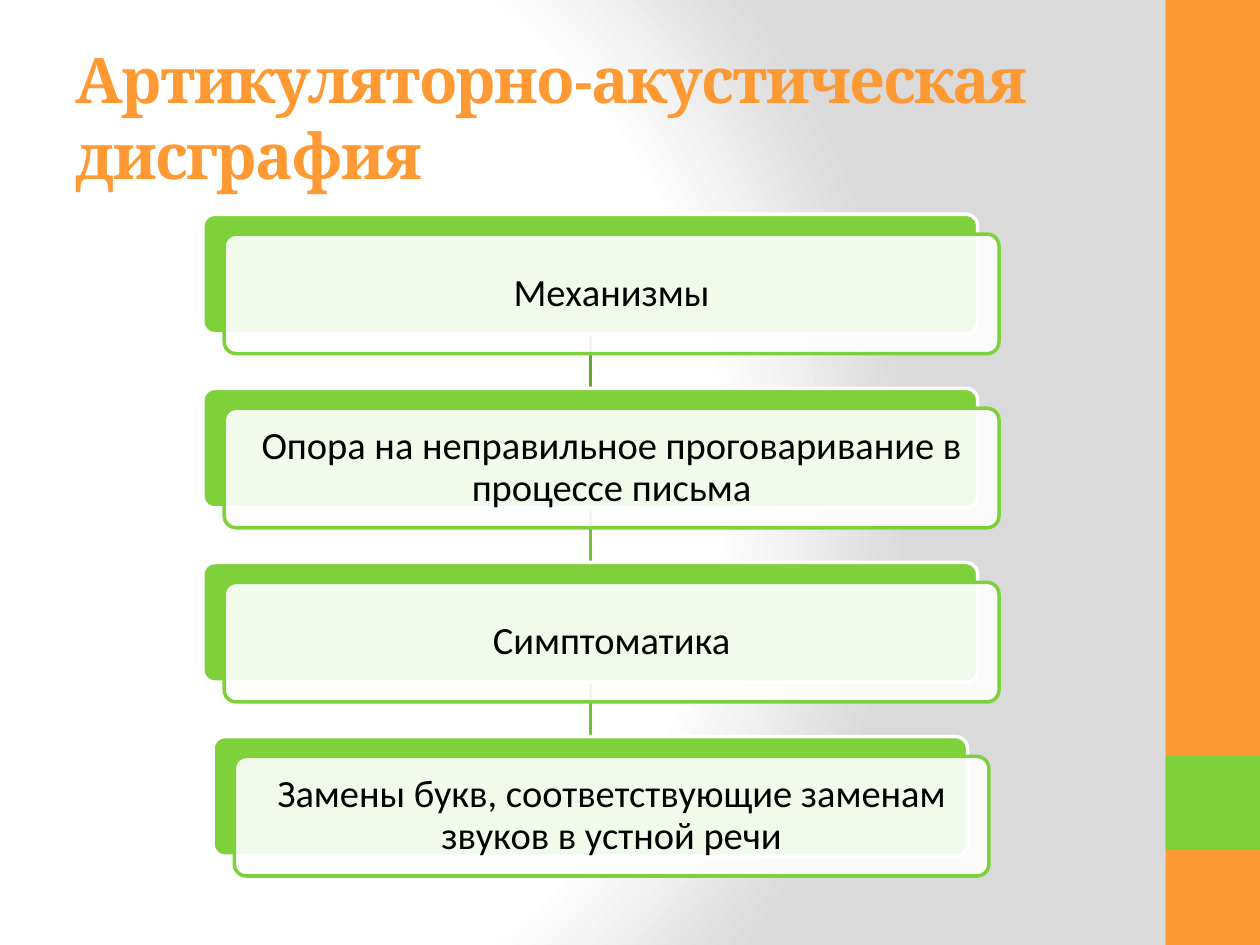
from dataclasses import dataclass

import pptx
import pptx.dml.color
import pptx.enum.shapes
import pptx.enum.text
import pptx.oxml
import pptx.oxml.ns
import pptx.util

Cm = pptx.util.Cm
Pt = pptx.util.Pt
qn = pptx.oxml.ns.qn

COLORS = {
    "orange": "FF9933",
    "green": "7FD13B",
    "first_link": "66A72F",
    "link": "73BE36",
    "white": "FFFFFF",
    "grey": "DADADA",
    "black": "000000",
}

CENTER_X = 11.9
FIRST_TOP = 4.32
PITCH = 3.51
CARD_HEIGHT = 2.41
SHIFT_X, SHIFT_Y = 0.43, 0.4
INSET = 0.23


@dataclass
class Step:
    text: str
    width: float = 15.62


STEPS = [
    Step("Механизмы"),
    Step("Опора на неправильное проговаривание в процессе письма"),
    Step("Симптоматика"),
    Step("Замены букв, соответствующие заменам звуков в устной речи", 15.21),
]


def rgb(color: str) -> pptx.dml.color.RGBColor:
    return pptx.dml.color.RGBColor.from_string(COLORS[color])


def set_attributes(target, values: dict) -> None:
    for name, value in values.items():
        setattr(target, name, value)


def set_background(slide) -> None:
    """Fill the slide with a radial gradient from white to grey."""
    stops = "".join(
        f'<a:gs pos="{position}000"><a:srgbClr val="{COLORS[color]}"/></a:gs>'
        for position, color in ((0, "white"), (75, "white"), (100, "grey"))
    )
    background = pptx.oxml.parse_xml(
        f'<p:bg {pptx.oxml.ns.nsdecls("p", "a")}><p:bgPr>'
        f'<a:gradFill rotWithShape="1"><a:gsLst>{stops}</a:gsLst>'
        '<a:path path="circle">'
        '<a:fillToRect l="20000" t="50000" r="100000" b="50000"/></a:path>'
        "</a:gradFill><a:effectLst/></p:bgPr></p:bg>"
    )
    slide.element.find(qn("p:cSld")).insert(0, background)


def add_block(slide, left: float, top: float, width: float, height: float,
              fill: str, outline: str | None = None):
    """Add a plain rectangle, or a rounded one when it has an outline."""
    kinds = pptx.enum.shapes.MSO_SHAPE
    kind = kinds.ROUNDED_RECTANGLE if outline else kinds.RECTANGLE
    block = slide.shapes.add_shape(kind, Cm(left), Cm(top), Cm(width), Cm(height))
    block.shadow.inherit = False
    block.fill.solid()
    block.fill.fore_color.rgb = rgb(fill)
    if outline:
        block.adjustments[0] = 0.1
        block.line.color.rgb = rgb(outline)
        block.line.width = Pt(2)
    else:
        block.line.fill.background()
    return block


def add_link(slide, top: float, bottom: float, color: str) -> None:
    link = slide.shapes.add_connector(
        pptx.enum.shapes.MSO_CONNECTOR.STRAIGHT,
        Cm(CENTER_X), Cm(top), Cm(CENTER_X), Cm(bottom),
    )
    link.line.color.rgb = rgb(color)
    link.line.width = Pt(2)
    properties = link.element.find(qn("p:spPr"))
    properties.append(properties.makeelement(qn("a:effectLst"), {}))


def add_step(slide, step: Step, top: float) -> None:
    """Add a green card with a translucent white text card in front."""
    left = CENTER_X - step.width / 2
    add_block(slide, left, top, step.width, CARD_HEIGHT, "green", "white")
    front = add_block(slide, left + SHIFT_X, top + SHIFT_Y, step.width,
                      CARD_HEIGHT, "white", "green")
    front_color = front.element.spPr.find(qn("a:solidFill"))[0]
    front_color.append(front_color.makeelement(qn("a:alpha"), {"val": "90000"}))

    frame = front.text_frame
    margins = ("margin_left", "margin_top", "margin_right", "margin_bottom")
    set_attributes(frame, dict.fromkeys(margins, Cm(INSET)))
    set_attributes(frame, {
        "word_wrap": True,
        "vertical_anchor": pptx.enum.text.MSO_ANCHOR.MIDDLE,
        "text": step.text,
    })
    paragraph = frame.paragraphs[0]
    set_attributes(paragraph, {
        "alignment": pptx.enum.text.PP_ALIGN.CENTER,
        "line_spacing": 0.9,
    })
    font = paragraph.runs[0].font
    set_attributes(font, {"name": "Calibri", "size": Pt(22)})
    font.color.rgb = rgb("black")


def format_title(slide, text: str) -> None:
    title = slide.shapes.title
    set_attributes(title, {
        "left": Cm(1.27), "top": Cm(0.76),
        "width": Cm(21.16), "height": Cm(3.18),
    })
    set_attributes(title.text_frame, {
        "text": text,
        "word_wrap": True,
        "auto_size": pptx.enum.text.MSO_AUTO_SIZE.NONE,
        "vertical_anchor": pptx.enum.text.MSO_ANCHOR.MIDDLE,
    })
    paragraph = title.text_frame.paragraphs[0]
    paragraph.alignment = pptx.enum.text.PP_ALIGN.LEFT
    font = paragraph.runs[0].font
    set_attributes(font, {"name": "Cambria", "size": Pt(36), "bold": True})
    font.color.rgb = rgb("orange")
    paragraph.runs[0].font._element.set("spc", "-100")


def main() -> None:
    presentation = pptx.Presentation()
    set_attributes(presentation, {"slide_width": Cm(25.4), "slide_height": Cm(19.05)})
    slide = presentation.slides.add_slide(presentation.slide_layouts[5])
    set_background(slide)
    add_block(slide, 23.5, 0, 1.9, 19.05, "orange")
    add_block(slide, 23.5, 15.24, 1.9, 1.9, "green")
    format_title(slide, "Артикуляторно-акустическая дисграфия")

    tops = [FIRST_TOP + index * PITCH for index in range(len(STEPS))]
    for index, next_top in enumerate(tops[1:]):
        color = "link" if index else "first_link"
        add_link(slide, tops[index] + CARD_HEIGHT, next_top, color)
    for step, top in zip(STEPS, tops):
        add_step(slide, step, top)
    presentation.save("out.pptx")


if __name__ == "__main__":
    main()
